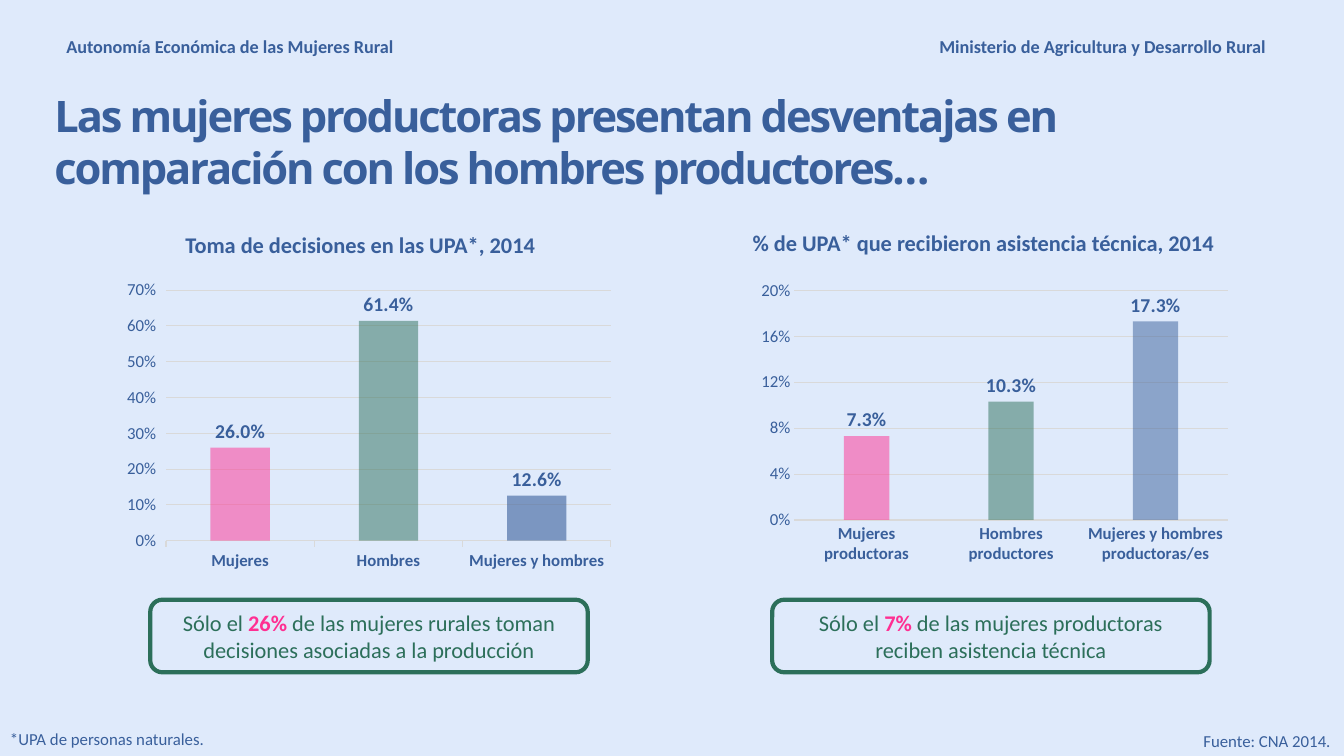
"""Build a slide comparing women and men producers with two column charts."""
from dataclasses import dataclass
from typing import Any, Optional

import pptx
import pptx.chart.data
import pptx.dml.color
import pptx.enum.chart
import pptx.enum.shapes
import pptx.enum.text
import pptx.oxml
import pptx.oxml.ns
import pptx.util

COLORS = {
    "sky": "DFEAFB",
    "blue": "395F9B",
    "green": "2C6F5A",
    "pink": "FF2F92",
    "grid": "D9D9D9",
}
SLIDE_WIDTH = pptx.util.Inches(13.33)
SLIDE_HEIGHT = pptx.util.Inches(7.5)
ALIGN = pptx.enum.text.PP_ALIGN
ANCHOR = pptx.enum.text.MSO_ANCHOR
AUTO_SIZE = pptx.enum.text.MSO_AUTO_SIZE
TICK = pptx.enum.chart.XL_TICK_MARK


@dataclass(frozen=True)
class Place:
    """Position and size as percentages of the slide."""
    left: float
    top: float
    width: float
    height: float

    def box(self) -> tuple[int, int, int, int]:
        return (
            int(SLIDE_WIDTH * self.left / 100),
            int(SLIDE_HEIGHT * self.top / 100),
            int(SLIDE_WIDTH * self.width / 100),
            int(SLIDE_HEIGHT * self.height / 100),
        )


@dataclass(frozen=True)
class Label:
    text: str
    place: Place
    size: float
    bold: bool = False
    align: Optional[ALIGN] = None
    wrap: bool = True


@dataclass(frozen=True)
class Comparison:
    place: Place
    shares: dict[str, float]
    opacities: tuple[int, ...]
    maximum: float
    step: float
    gap: int
    tick: TICK
    overlap: int = 0
    plot: Optional[tuple[float, ...]] = None


@dataclass(frozen=True)
class Finding:
    place: Place
    figure: str
    ending: str


TITLE = Label(
    "Las mujeres productoras presentan desventajas en comparación con los hombres productores…",
    Place(3.3, 11.07, 91.13, 15.2), 31, True, ALIGN.LEFT)
LABELS = [
    Label("Autonomía Económica de las Mujeres Rural", Place(4.2, 4, 27.53, 4.27), 13, True),
    Label("Ministerio de Agricultura y Desarrollo Rural", Place(69.15, 4, 26.18, 4.27), 13, True,
          wrap=False),
    Label("Toma de decisiones en las UPA*, 2014", Place(5.85, 29.87, 41.93, 4.93), 16, True,
          ALIGN.CENTER),
    Label("% de UPA* que recibieron asistencia técnica, 2014", Place(52.2, 29.6, 41.93, 4.93), 16,
          True, ALIGN.CENTER),
    Label("*UPA de personas naturales.", Place(0, 95.73, 17.93, 4), 12),
    Label("Fuente: CNA 2014.", Place(88.8, 96, 11.25, 4), 12),
]
COMPARISONS = [
    Comparison(Place(8.7, 36.27, 37.5, 40),
               {"Mujeres": 0.26, "Hombres": 0.614, "Mujeres y hombres": 0.126},
               (50, 50, 60), 0.7, 0.1, 150, TICK.OUTSIDE),
    Comparison(Place(54.98, 36, 37.5, 40),
               {"Mujeres productoras": 0.073, "Hombres productores": 0.103,
                "Mujeres y hombres productoras/es": 0.173},
               (50, 50, 50), 0.2, 0.04, 219, TICK.NONE, -27, (0.11, 0.06, 0.86, 0.76)),
]
FINDINGS = [
    Finding(Place(11.18, 79.33, 32.55, 9.6), "26%",
            " de las mujeres rurales toman decisiones asociadas a la producción"),
    Finding(Place(57.45, 79.33, 32.55, 9.6), "7%",
            " de las mujeres productoras reciben asistencia técnica"),
]


def rgb(color: str) -> pptx.dml.color.RGBColor:
    return pptx.dml.color.RGBColor.from_string(COLORS[color])


def apply_format(target: Any, values: dict[str, Any]) -> None:
    for attribute, value in values.items():
        setattr(target, attribute, value)


def style_font(font: Any, size: float, color: str, bold: bool = False,
               typeface: str = "Calibri") -> None:
    apply_format(font, {"name": typeface, "size": pptx.util.Pt(size), "bold": bold})
    font.color.rgb = rgb(color)


def style_line(line: Any, color: str, width: float) -> None:
    line.color.rgb = rgb(color)
    line.width = pptx.util.Pt(width)


def write_label(shape: Any, label: Label, typeface: str = "Calibri") -> Any:
    apply_format(shape.text_frame, {
        "word_wrap": label.wrap,
        "auto_size": AUTO_SIZE.SHAPE_TO_FIT_TEXT,
        "vertical_anchor": ANCHOR.TOP,
    })
    paragraph = shape.text_frame.paragraphs[0]
    paragraph.alignment = label.align
    run = paragraph.add_run()
    run.text = label.text
    style_font(run.font, label.size, "blue", label.bold, typeface)
    return run


def draw_title(slide: Any) -> None:
    heading = slide.shapes.title
    apply_format(heading, dict(zip(("left", "top", "width", "height"), TITLE.place.box())))
    run = write_label(heading, TITLE, "Noto Sans")
    run._r.get_or_add_rPr().set("spc", "-150")


def set_plot_area(chart: Any, plot: tuple[float, ...]) -> None:
    area = chart._chartSpace.chart.plotArea
    for layout in area.findall(pptx.oxml.ns.qn("c:layout")):
        area.remove(layout)
    sizes = "".join(f'<c:{tag} val="{share}"/>' for tag, share in zip("xywh", plot))
    area.insert(0, pptx.oxml.parse_xml(
        f'<c:layout {pptx.oxml.ns.nsdecls("c")}><c:manualLayout><c:layoutTarget val="inner"/>'
        f'<c:xMode val="edge"/><c:yMode val="edge"/>{sizes}</c:manualLayout></c:layout>'))


def draw_comparison(slide: Any, comparison: Comparison) -> None:
    shares = pptx.chart.data.CategoryChartData(number_format="0.0%")
    shares.categories = list(comparison.shares)
    shares.add_series("Series 1", list(comparison.shares.values()))
    chart = slide.shapes.add_chart(
        pptx.enum.chart.XL_CHART_TYPE.COLUMN_CLUSTERED, *comparison.place.box(), shares).chart
    apply_format(chart, {"has_legend": False, "has_title": False})
    style_font(chart.font, 12, "blue")

    columns = chart.plots[0]
    apply_format(columns, {"gap_width": comparison.gap, "overlap": comparison.overlap,
                           "vary_by_categories": False, "has_data_labels": True})
    apply_format(columns.data_labels, {
        "show_value": True, "number_format": "0.0%", "number_format_is_linked": False,
        "position": pptx.enum.chart.XL_LABEL_POSITION.OUTSIDE_END})
    style_font(columns.data_labels.font, 14, "blue", True)

    groups = zip(("pink", "green", "blue"), comparison.opacities)
    for index, (color, opacity) in enumerate(groups):
        fill = columns.series[0].points[index].format.fill
        fill.solid()
        fill.fore_color.rgb = rgb(color)
        tint = fill._xPr.find(".//" + pptx.oxml.ns.qn("a:srgbClr"))
        tint.append(pptx.oxml.parse_xml(
            f'<a:alpha {pptx.oxml.ns.nsdecls("a")} val="{opacity * 1000}"/>'))

    apply_format(chart.value_axis, {
        "minimum_scale": 0, "maximum_scale": comparison.maximum, "major_unit": comparison.step,
        "major_tick_mark": comparison.tick, "has_major_gridlines": True})
    apply_format(chart.value_axis.tick_labels,
                 {"number_format": "0%", "number_format_is_linked": False})
    chart.value_axis.format.line.fill.background()
    style_line(chart.value_axis.major_gridlines.format.line, "grid", 0.75)
    chart.category_axis.major_tick_mark = comparison.tick
    style_font(chart.category_axis.tick_labels.font, 12, "blue", True)
    style_line(chart.category_axis.format.line, "grid", 0.75)
    if comparison.plot:
        set_plot_area(chart, comparison.plot)


def draw_finding(slide: Any, finding: Finding) -> None:
    callout = slide.shapes.add_shape(
        pptx.enum.shapes.MSO_SHAPE.ROUNDED_RECTANGLE, *finding.place.box())
    callout.shadow.inherit = False
    callout.fill.background()
    style_line(callout.line, "green", 3)
    apply_format(callout.text_frame, {"word_wrap": True, "vertical_anchor": ANCHOR.MIDDLE})
    sentence = callout.text_frame.paragraphs[0]
    sentence.alignment = ALIGN.CENTER
    for text, color, bold in (("Sólo el ", "green", False), (finding.figure, "pink", True),
                              (finding.ending, "green", False)):
        run = sentence.add_run()
        run.text = text
        style_font(run.font, 16, color, bold)


def main() -> None:
    deck = pptx.Presentation()
    apply_format(deck, {"slide_width": SLIDE_WIDTH, "slide_height": SLIDE_HEIGHT})
    slide = deck.slides.add_slide(deck.slide_layouts.get_by_name("Title Only"))
    slide.background.fill.solid()
    slide.background.fill.fore_color.rgb = rgb("sky")
    draw_title(slide)
    for label in LABELS:
        write_label(slide.shapes.add_textbox(*label.place.box()), label)
    for comparison in COMPARISONS:
        draw_comparison(slide, comparison)
    for finding in FINDINGS:
        draw_finding(slide, finding)
    deck.save("out.pptx")


if __name__ == "__main__":
    main()
